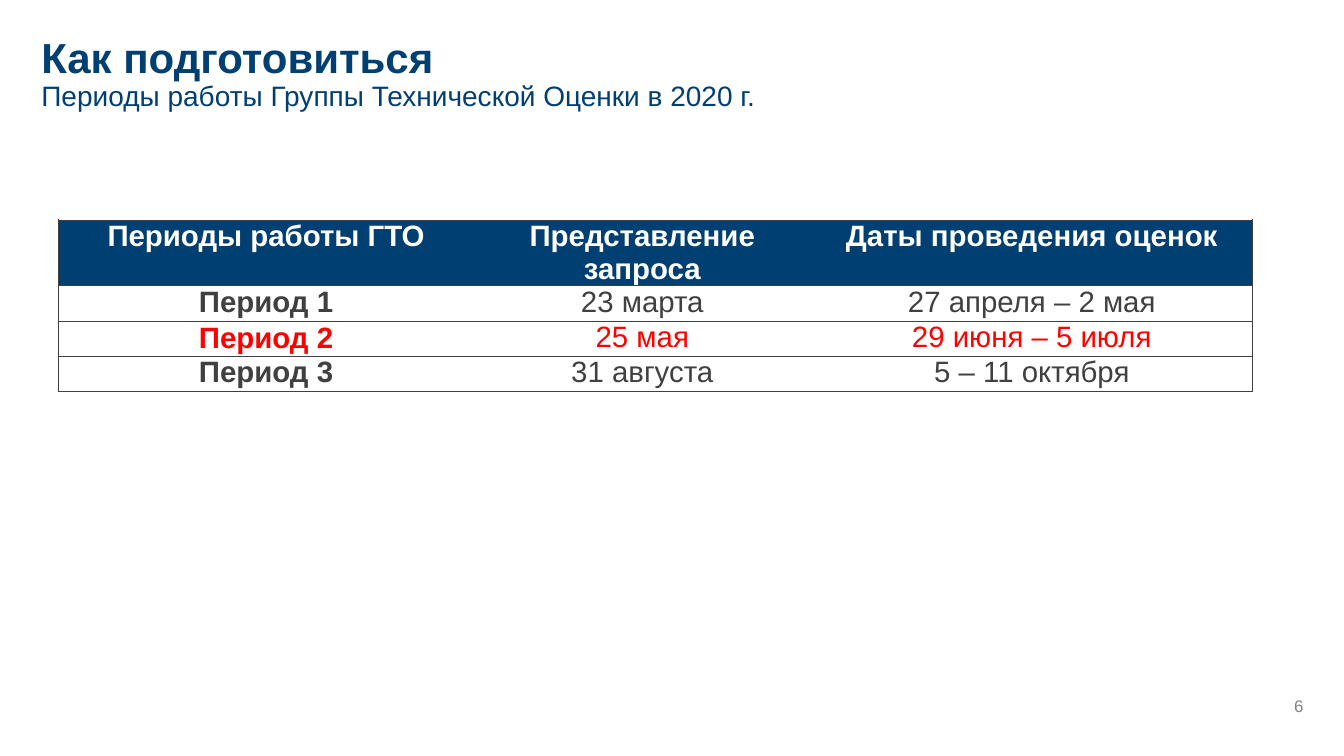
from lxml.etree import SubElement as Sub
from pptx import Presentation
from pptx.dml.color import RGBColor
from pptx.enum.text import MSO_ANCHOR as Anchor, MSO_AUTO_SIZE as Auto, PP_ALIGN as Align
from pptx.oxml.ns import qn
from pptx.util import Pt

NAVY, GREY, RED, WHITE, PALE = "003F72", "404040", "FF0000", "FFFFFF", "808080"
ROWS = [
    ("Периоды работы ГТО", "Представление запроса", "Даты проведения оценок"),
    ("Период 1", "23 марта", "27 апреля – 2 мая"),
    ("Период 2", "25 мая", "29 июня – 5 июля"),
    ("Период 3", "31 августа", "5 – 11 октября"),
]
WIDTHS = (296.5, 241, 315.5)
HIGHS = (47, 25.2, 25.2, 25.2)
INKS = (WHITE, GREY, RED, GREY)


def color(code):
    """Turn a hex string into a colour."""
    return RGBColor.from_string(code)


def apply(item, **vals):
    """Set each given attribute on the item."""
    for name, val in vals.items():
        setattr(item, name, val)


def write(para, text, size, ink, bold=False):
    """Add one styled run to a paragraph."""
    run = para.add_run()
    run.text = text
    apply(run.font, name="Arial", size=Pt(size), bold=bold)
    run.font.color.rgb = color(ink)


def frame(shape, box, anchor, align):
    """Place a text shape without insets and return its first paragraph."""
    left, top, width, height = map(Pt, box)
    apply(shape, left=left, top=top, width=width, height=height)
    apply(shape.text_frame, margin_left=0, margin_top=0, margin_right=0,
          margin_bottom=0, word_wrap=True, auto_size=Auto.NONE,
          vertical_anchor=anchor)
    para = shape.text_frame.paragraphs[0]
    para.alignment = align
    return para


def head(slide, box):
    """Fill the title with a heading and a subheading."""
    para = frame(slide.shapes.title, box, Anchor.TOP, Align.LEFT)
    para.line_spacing = 0.9
    write(para, "Как подготовиться", 30, NAVY, True)
    para.add_line_break()
    write(para, "Периоды работы Группы Технической Оценки в 2020 г.", 20, NAVY)


def number(slide, box):
    """Write the page number at the lower right."""
    shape = slide.shapes.add_textbox(*map(Pt, box))
    write(frame(shape, box, Anchor.BOTTOM, Align.RIGHT), "6", 12, PALE)


def border(cell, sides):
    """Draw thin lines on the named sides and clear the others."""
    props = cell._tc.get_or_add_tcPr()
    for side in "LRTB":
        line = Sub(props, qn(f"a:ln{side}"), w=str(Pt(0.5)))
        if side in sides:
            fill = Sub(line, qn("a:solidFill"))
            Sub(fill, qn("a:srgbClr"), val=GREY)
        else:
            Sub(line, qn("a:noFill"))


def periods(slide, box):
    """Build the table of work periods."""
    shape = slide.shapes.add_table(len(ROWS), len(WIDTHS), *map(Pt, box))
    table = shape.table
    apply(table, first_row=False, horz_banding=False)
    for col, width in zip(table.columns, WIDTHS):
        col.width = Pt(width)
    for r, (row, high, ink) in enumerate(zip(ROWS, HIGHS, INKS)):
        table.rows[r].height = Pt(high)
        for c, text in enumerate(row):
            cell = table.cell(r, c)
            mid = ink == RED and c == 0
            apply(cell, margin_left=Pt(10), margin_right=Pt(10), margin_top=0,
                  margin_bottom=0,
                  vertical_anchor=Anchor.MIDDLE if mid else Anchor.TOP)
            border(cell, "TB" + ("L", "", "R")[c])
            if r == 0:
                cell.fill.solid()
                cell.fill.fore_color.rgb = color(NAVY)
            else:
                cell.fill.background()
            para = cell.text_frame.paragraphs[0]
            para.alignment = Align.CENTER
            write(para, text, 21, ink, r == 0 or c == 0)


def main():
    """Build and save the slide."""
    deck = Presentation()
    apply(deck, slide_width=Pt(960), slide_height=Pt(540))
    slide = deck.slides.add_slide(deck.slide_layouts[5])
    head(slide, (29.5, 26.5, 901.5, 87))
    number(slide, (894, 488, 37, 23))
    periods(slide, (41.8, 157, sum(WIDTHS), sum(HIGHS)))
    deck.save("out.pptx")


if __name__ == "__main__":
    main()
